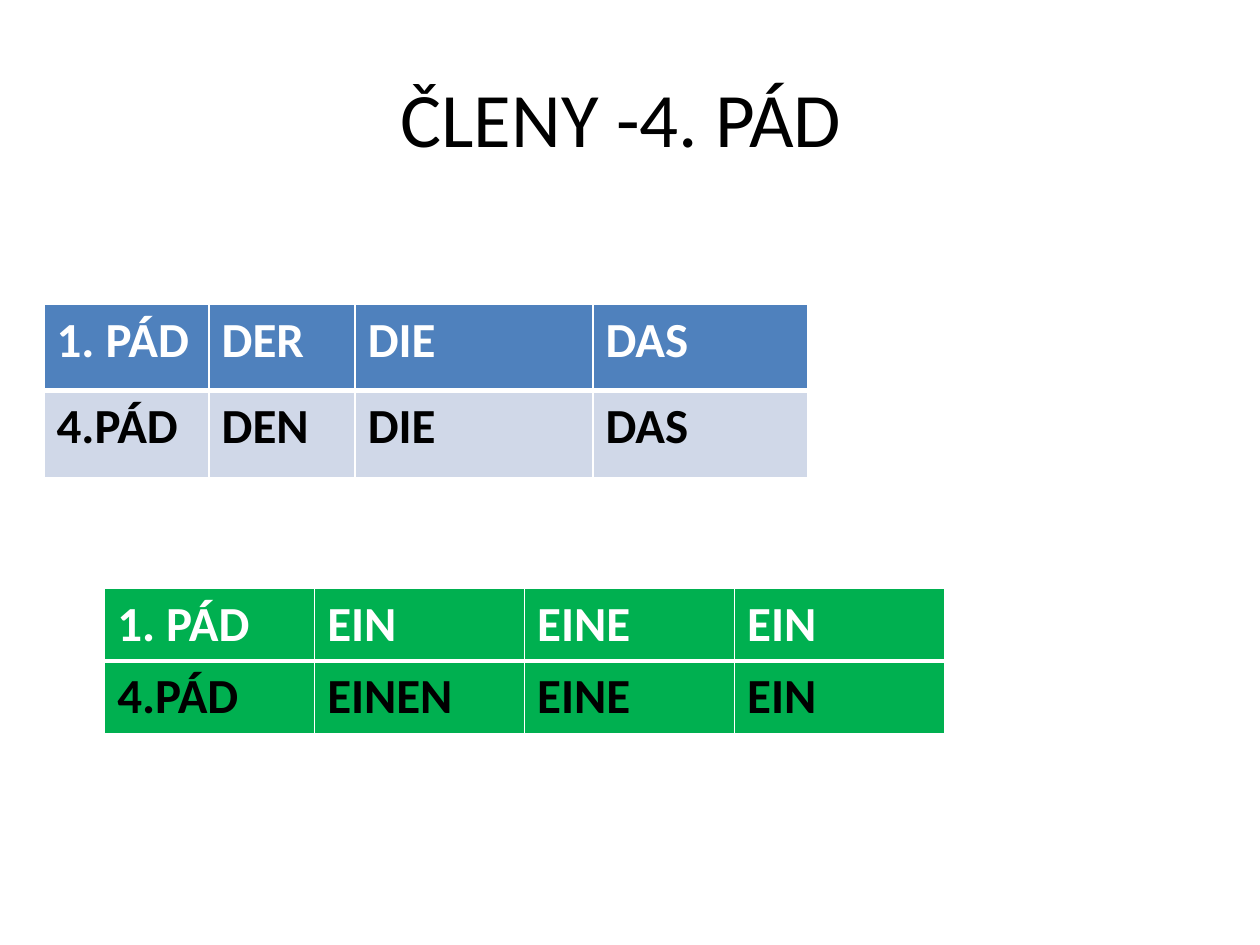
from dataclasses import dataclass

from lxml import etree
from pptx import Presentation
from pptx.dml.color import RGBColor
from pptx.enum.text import MSO_ANCHOR, PP_ALIGN
from pptx.oxml.ns import qn
from pptx.util import Pt

MIDDLE = MSO_ANCHOR.MIDDLE
CENTER = PP_ALIGN.CENTER
TITLE_ONLY = 5


@dataclass(frozen=True)
class Theme:
    font: str = "Calibri"
    title: int = 44
    body: int = 28
    black: str = "000000"
    white: str = "FFFFFF"
    blue: str = "4F81BD"
    pale: str = "D0D8E8"
    green: str = "00B050"
    thin: int = 1
    thick: int = 3


@dataclass(frozen=True)
class Grid:
    left: float
    top: float
    cols: list[float]
    row: float
    fills: list[str]
    rows: list[list[str]]


THEME = Theme()

# Article tables: definite, then indefinite
GRIDS = [
    Grid(25.2, 173.8, [94.3, 83.5, 136, 122.4], 49.5,
         [THEME.blue, THEME.pale],
         [["1. PÁD", "DER", "DIE", "DAS"],
          ["4.PÁD", "DEN", "DIE", "DAS"]]),
    Grid(59.8, 336.3, [120] * 4, 40.8,
         [THEME.green, THEME.green],
         [["1. PÁD", "EIN", "EINE", "EIN"],
          ["4.PÁD", "EINEN", "EINE", "EIN"]]),
]


def style(para, size: int, color: str, bold: bool = False) -> None:
    font = para.font
    font.name = THEME.font
    font.size = Pt(size)
    font.bold = bold
    font.color.rgb = RGBColor.from_string(color)


def edge(cell, head: bool) -> None:
    """Draw white cell borders, thick between the two rows."""
    props = cell._tc.get_or_add_tcPr()
    heavy = "lnB" if head else "lnT"
    for spot, side in enumerate(("lnL", "lnR", "lnT", "lnB")):
        width = THEME.thick if side == heavy else THEME.thin
        line = etree.Element(qn(f"a:{side}"), w=str(Pt(width)))
        fill = etree.SubElement(line, qn("a:solidFill"))
        etree.SubElement(fill, qn("a:srgbClr"), val=THEME.white)
        props.insert(spot, line)


def draw(slide, grid: Grid) -> None:
    count = len(grid.rows)
    frame = slide.shapes.add_table(
        count, len(grid.cols), Pt(grid.left), Pt(grid.top),
        Pt(sum(grid.cols)), Pt(grid.row * count))
    table = frame.table
    for col, width in zip(table.columns, grid.cols):
        col.width = Pt(width)
    for r, (words, fill) in enumerate(zip(grid.rows, grid.fills)):
        table.rows[r].height = Pt(grid.row)
        head = r == 0
        for c, word in enumerate(words):
            cell = table.cell(r, c)
            cell.text = word
            cell.fill.solid()
            cell.fill.fore_color.rgb = RGBColor.from_string(fill)
            edge(cell, head)
            color = THEME.white if head else THEME.black
            style(cell.text_frame.paragraphs[0], THEME.body, color, True)


def main() -> None:
    deck = Presentation()
    deck.slide_width, deck.slide_height = Pt(720), Pt(540)
    slide = deck.slides.add_slide(deck.slide_layouts[TITLE_ONLY])

    # Title
    title = slide.shapes.title
    title.left, title.top = Pt(36), Pt(21.6)
    title.width, title.height = Pt(648), Pt(90)
    title.text_frame.text = "ČLENY -4. PÁD "
    title.text_frame.vertical_anchor = MIDDLE
    para = title.text_frame.paragraphs[0]
    para.alignment = CENTER
    style(para, THEME.title, THEME.black)

    # Tables
    for grid in GRIDS:
        draw(slide, grid)

    deck.save("out.pptx")


if __name__ == "__main__":
    main()
